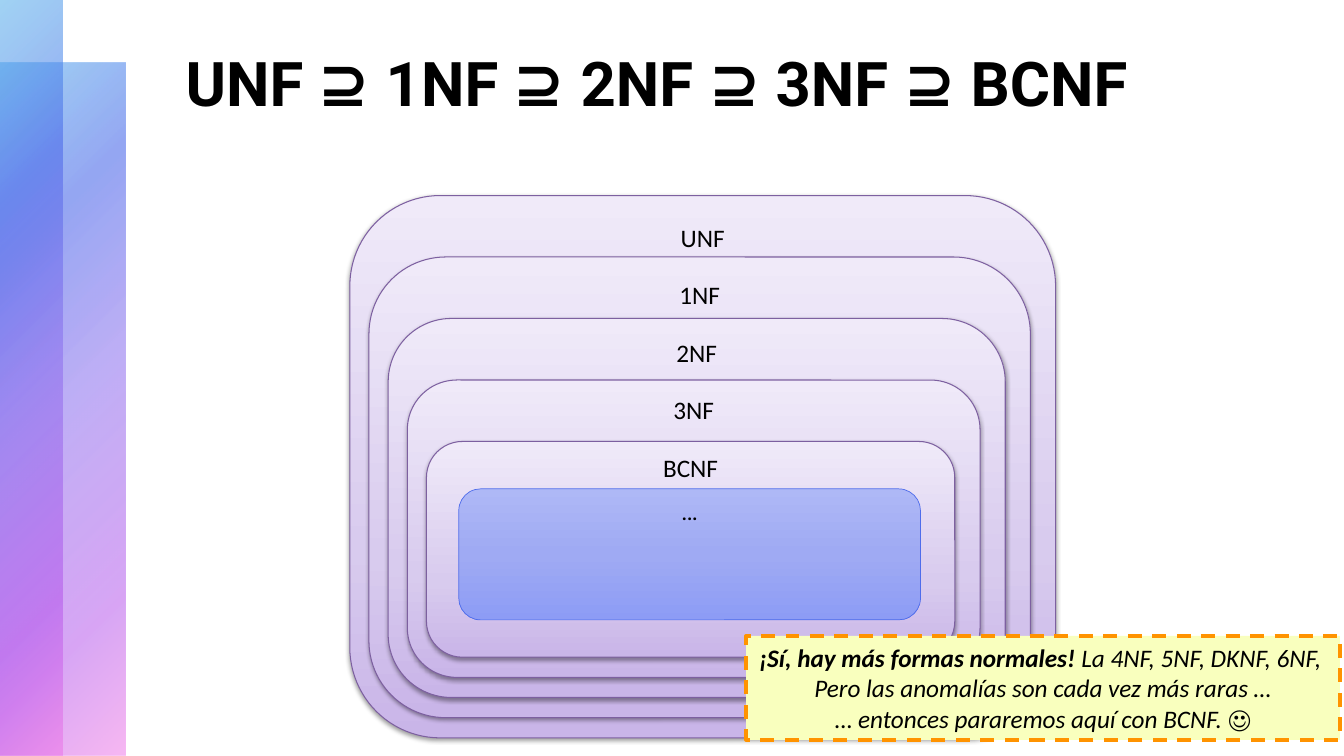
from pptx import Presentation
from pptx.dml.color import RGBColor
from pptx.enum.dml import MSO_LINE_DASH_STYLE as Dash
from pptx.enum.shapes import MSO_SHAPE as Shape
from pptx.enum.text import MSO_ANCHOR as Anchor, PP_ALIGN as Align
from pptx.oxml import parse_xml
from pptx.oxml.ns import nsdecls
from pptx.util import Inches, Pt

BLACK = RGBColor(0x00, 0x00, 0x00)
PURPLE = RGBColor(0x7D, 0x60, 0xA0)
BLUE = RGBColor(0x4E, 0x6C, 0xEB)
ORANGE = RGBColor(0xFF, 0x93, 0x00)
PALE_YELLOW = RGBColor(0xF9, 0xFF, 0xBE)

# Gradient stops: position, colour, opacity (all in percent)
SKY, VIOLET = RGBColor(0x45, 0xA9, 0xEA), RGBColor(0x8B, 0x6E, 0xEE)
MAGENTA, PINK = RGBColor(0xB3, 0x4E, 0xEB), RGBColor(0xEE, 0x6E, 0xE7)
BAND_STOPS = [(0, SKY, 50), (25, BLUE, 60), (50, VIOLET, 55), (81, MAGENTA, 50), (99, PINK, 50)]
LILAC_STOPS = [(0, RGBColor(0xC9, 0xB5, 0xE8), 100), (35, RGBColor(0xD8, 0xCB, 0xEE), 100),
               (100, RGBColor(0xF0, 0xEA, 0xF9), 100)]
CORE_STOPS = [(0, RGBColor(0xAE, 0xB8, 0xF6), 100), (50, RGBColor(0x9F, 0xAA, 0xF3), 100),
              (100, RGBColor(0x8D, 0x9C, 0xF5), 100)]
CORNER = '<a:path path="circle"><a:fillToRect r="100000" b="100000"/></a:path>'
UPWARD = '<a:lin ang="16200000" scaled="0"/>'
DOWNWARD = '<a:lin ang="5400000" scaled="0"/>'
SHADOW = (f'<a:outerShdw {nsdecls("a")} blurRad="40000" dist="20000" dir="5400000" rotWithShape="0">'
          '<a:srgbClr val="000000"><a:alpha val="38000"/></a:srgbClr></a:outerShdw>')


def add_gradient_shape(kind, left, top, width, height, stops, direction):
    shape = slide.shapes.add_shape(kind, Inches(left), Inches(top), Inches(width), Inches(height))
    shape.shadow.inherit = False
    stop_list = "".join(
        f'<a:gs pos="{position * 1000}"><a:srgbClr val="{color}"><a:alpha val="{opacity * 1000}"/>'
        "</a:srgbClr></a:gs>" for position, color, opacity in stops)
    gradient = parse_xml(f'<a:gradFill {nsdecls("a")} rotWithShape="1"><a:gsLst>{stop_list}</a:gsLst>'
                         f"{direction}</a:gradFill>")
    shape._element.spPr.find("{*}prstGeom").addnext(gradient)
    return shape


def add_run(paragraph, text, font="Calibri", size=18, bold=False, italic=False):
    run = paragraph.add_run()
    run.text = text
    run.font.name = font
    run.font.size = Pt(size)
    run.font.bold = bold
    run.font.italic = italic
    run.font.color.rgb = BLACK


presentation = Presentation()
presentation.slide_width = Inches(13.33)
presentation.slide_height = Inches(7.5)
slide = presentation.slides.add_slide(presentation.slide_layouts[5])

# Two overlapping bands along the left edge
for top, width in [(0.62, 1.24), (0, 0.62)]:
    band = add_gradient_shape(Shape.RECTANGLE, 0, top, width, 7.5 - top, BAND_STOPS, CORNER)
    band.line.fill.background()

title = slide.shapes.title
title.left, title.top, title.width, title.height = map(Inches, (1.74, 0.4, 10.37, 1.39))
title.text_frame.vertical_anchor = Anchor.TOP
title_paragraph = title.text_frame.paragraphs[0]
title_paragraph.alignment = Align.LEFT
add_run(title_paragraph, "UNF ⊇ 1NF ⊇ 2NF ⊇ 3NF ⊇ BCNF", "Roboto", 44, bold=True)

# Nested normal forms, each one step inside the one before
nested = []
for level, name in enumerate(["UNF", "1NF", "2NF", "3NF", "BCNF"]):
    form = add_gradient_shape(Shape.ROUNDED_RECTANGLE, 3.47 + 0.19 * level, 1.94 + 0.61 * level,
                              7 - 0.44 * level, 5.38 - 0.81 * level, LILAC_STOPS, UPWARD)
    form._element.spPr.find("{*}effectLst").append(parse_xml(SHADOW))
    nested.append((form, name, "Calibri", PURPLE, 0.75))

core = add_gradient_shape(Shape.ROUNDED_RECTANGLE, 4.55, 4.85, 4.58, 1.3, CORE_STOPS, DOWNWARD)
nested.append((core, "…", "Roboto", BLUE, 0.5))

for shape, label, font, line_color, line_width in nested:
    shape.line.color.rgb = line_color
    shape.line.width = Pt(line_width)
    frame = shape.text_frame
    frame.vertical_anchor = Anchor.TOP
    frame.margin_top = 0
    frame.paragraphs[0].alignment = Align.CENTER
    add_run(frame.paragraphs[0], label, font)

# Remark in the lower right corner
remark = slide.shapes.add_shape(Shape.RECTANGLE, Inches(7.4), Inches(6.31), Inches(5.89), Inches(1.03))
remark.shadow.inherit = False
remark.fill.solid()
remark.fill.fore_color.rgb = PALE_YELLOW
remark.line.color.rgb = ORANGE
remark.line.width = Pt(2.5)
remark.line.dash_style = Dash.DASH
remark.text_frame.vertical_anchor = Anchor.MIDDLE
remark_lines = [
    [("¡Sí, hay más formas normales! ", True, True), ("La 4NF, 5NF, DKNF, 6NF, ", False, True)],
    [("Pero las anomalías son cada vez más raras …", False, True)],
    [("… entonces pararemos aquí con BCNF. ", False, True), ("☺", False, False)],
]
for index, runs in enumerate(remark_lines):
    frame = remark.text_frame
    paragraph = frame.add_paragraph() if index else frame.paragraphs[0]
    paragraph.alignment = Align.CENTER
    for text, bold, italic in runs:
        add_run(paragraph, text, bold=bold, italic=italic)

presentation.save("out.pptx")
